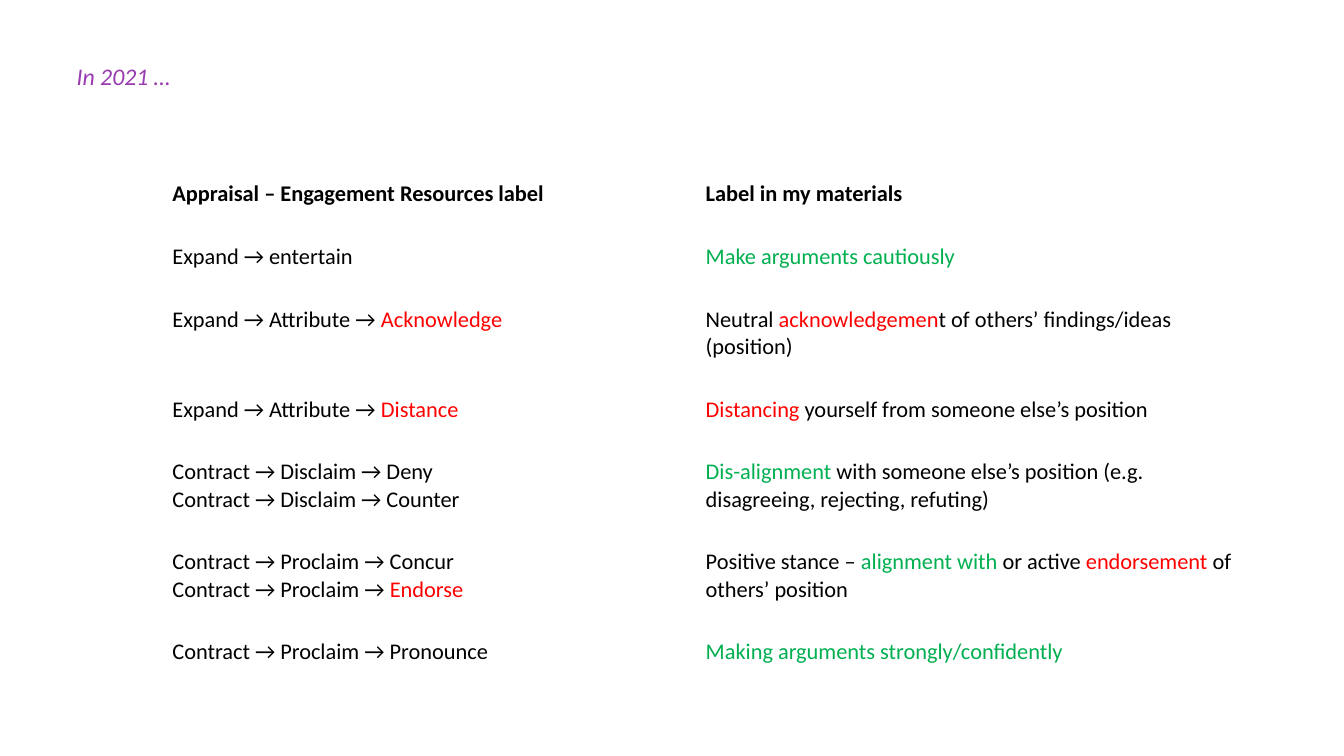
import pptx
import pptx.util
import pptx.dml.color
import pptx.enum.text

Inches = pptx.util.Inches
Pt = pptx.util.Pt

COLORS = {
    "black": "000000",
    "red": "FF0000",
    "green": "00B050",
    "purple": "993BB1",
    "white": "FFFFFF",
}
FONT = "Calibri"
COLUMN_WIDTHS = [5.29, 5.39]
LINE_HEIGHT = 0.27
CELL_MARGIN = 0.04

# Each row: lines on screen, left paragraphs, right paragraphs.
ROWS = [
    (1, [[("Appraisal – Engagement Resources label", "black")]],
     [[("Label in my materials", "black")]]),
    (1, [[("Expand → entertain", "black")]],
     [[("Make arguments cautiously", "green")]]),
    (2, [[("Expand → Attribute → ", "black"), ("Acknowledge", "red")]],
     [[("Neutral ", "black"), ("acknowledgemen", "red"),
       ("t of others’ findings/ideas (position)", "black")]]),
    (1, [[("Expand → Attribute → ", "black"), ("Distance", "red")]],
     [[("Distancing", "red"),
       (" yourself from someone else’s position", "black")]]),
    (2, [[("Contract → Disclaim → Deny", "black")],
         [("Contract → Disclaim → Counter", "black")]],
     [[("Dis-alignment ", "green"),
       ("with someone else’s position (e.g. disagreeing, rejecting, refuting)",
        "black")]]),
    (2, [[("Contract → Proclaim → Concur", "black")],
         [("Contract → Proclaim → ", "black"), ("Endorse", "red")]],
     [[("Positive stance – ", "black"), ("alignment with ", "green"),
       ("or active ", "black"), ("endorsement", "red"),
       (" of others’ position", "black")]]),
    (1, [[("Contract → Proclaim → Pronounce", "black")]],
     [[("Making arguments strongly/confidently", "green")]]),
]


def rgb(name):
    return pptx.dml.color.RGBColor.from_string(COLORS[name])


def format_run(r, size, color, bold=False, italic=False):
    r.font.name = FONT
    r.font.size = Pt(size)
    r.font.bold = bold
    r.font.italic = italic
    r.font.color.rgb = rgb(color)


def set_title(slide, text):
    sp = slide.shapes.title
    sp.left, sp.top = Inches(0.66), Inches(0.56)
    sp.width, sp.height = Inches(1.28), Inches(0.39)
    tf = sp.text_frame
    tf.text = text
    tf.word_wrap = False
    tf.auto_size = pptx.enum.text.MSO_AUTO_SIZE.NONE
    tf.vertical_anchor = pptx.enum.text.MSO_ANCHOR.TOP
    p = tf.paragraphs[0]
    p.alignment = pptx.enum.text.PP_ALIGN.LEFT
    format_run(p.runs[0], 17, "purple", italic=True)


def fill_cell(cell, paragraphs, bold):
    cell.fill.solid()
    cell.fill.fore_color.rgb = rgb("white")
    cell.margin_left = cell.margin_right = Inches(0.08)
    cell.margin_top = Inches(CELL_MARGIN + LINE_HEIGHT)
    cell.margin_bottom = Inches(CELL_MARGIN)
    tf = cell.text_frame
    for i, parts in enumerate(paragraphs):
        p = tf.add_paragraph() if i else tf.paragraphs[0]
        for text, color in parts:
            r = p.add_run()
            r.text = text
            format_run(r, 16, color, bold=bold)


def add_label_table(slide):
    heights = [2 * CELL_MARGIN + (lines + 1) * LINE_HEIGHT
               for lines, _, _ in ROWS]
    frame = slide.shapes.add_table(
        len(ROWS), len(COLUMN_WIDTHS), Inches(1.63), Inches(1.48),
        Inches(sum(COLUMN_WIDTHS)), Inches(sum(heights)))
    table = frame.table
    table.first_row = False
    table.horz_banding = False
    for column, width in zip(table.columns, COLUMN_WIDTHS):
        column.width = Inches(width)
    for i, (_, *cells) in enumerate(ROWS):
        table.rows[i].height = Inches(heights[i])
        for j, paragraphs in enumerate(cells):
            fill_cell(table.cell(i, j), paragraphs, bold=i == 0)


def main():
    prs = pptx.Presentation()
    prs.slide_width = Inches(13.33)
    prs.slide_height = Inches(7.5)
    slide = prs.slides.add_slide(prs.slide_layouts[5])
    set_title(slide, "In 2021 …")
    add_label_table(slide)
    prs.save("out.pptx")


if __name__ == "__main__":
    main()
